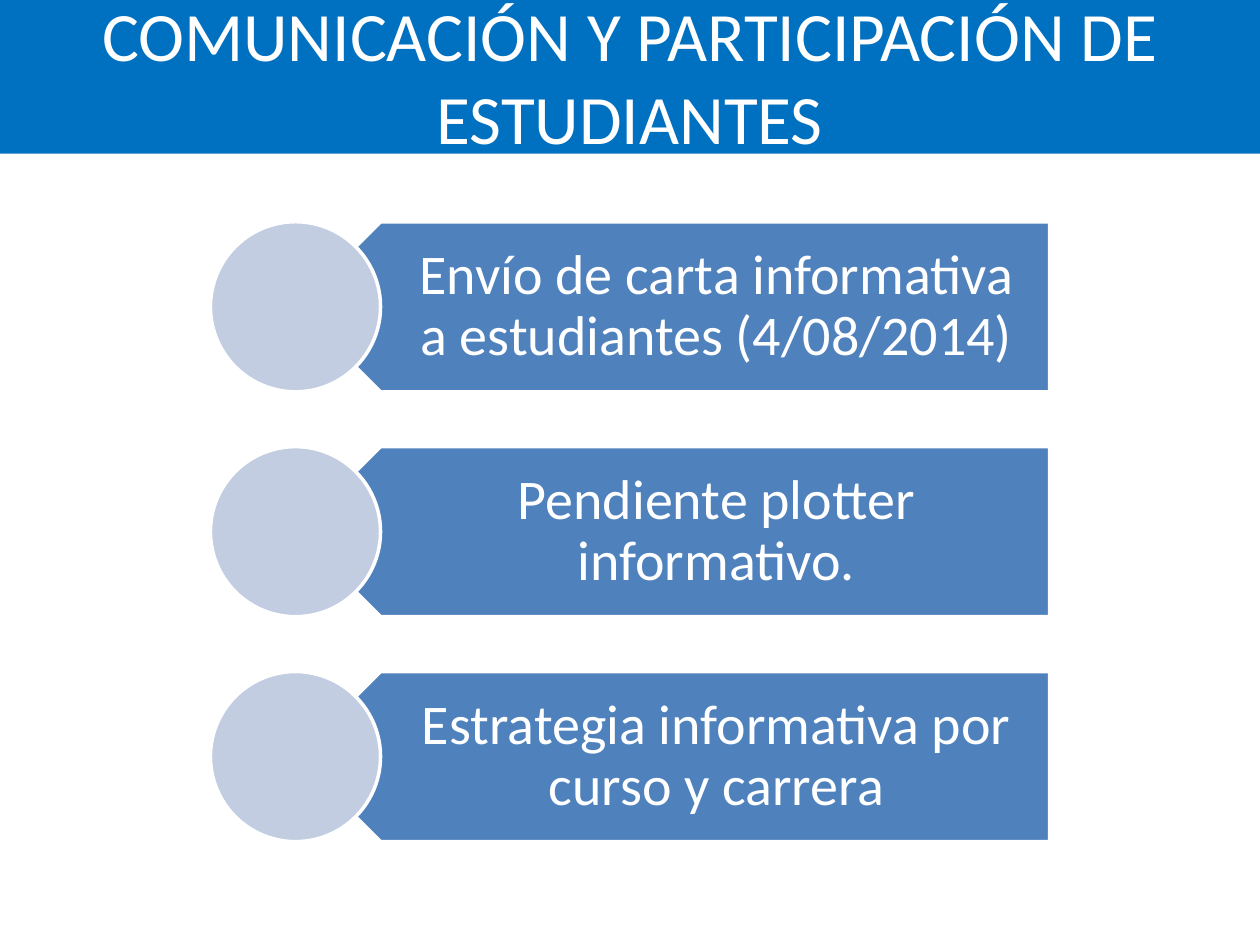
from pptx import Presentation
from pptx.dml.color import RGBColor
from pptx.enum import shapes, text
from pptx.util import Inches, Pt

THEME = {
    "font": "Calibri",
    "banner": "0070C0",
    "arrow": "4F81BD",
    "circle": "C2CDE1",
    "white": "FFFFFF",
    "title_size": 39.6,
    "item_size": 32,
    "line_width": 2,
}

prs = Presentation()
prs.slide_width, prs.slide_height = Inches(10), Inches(7.5)
W, H = prs.slide_width, prs.slide_height
s = prs.slides.add_slide(prs.slide_layouts[6])


def add_block(kind, x, y, w, h, fill, line=None):
    sp = s.shapes.add_shape(kind, int(x), int(y), int(w), int(h))
    sp.shadow.inherit = False
    sp.fill.solid()
    sp.fill.fore_color.rgb = RGBColor.from_string(THEME[fill])
    if line:
        sp.line.color.rgb = RGBColor.from_string(THEME[line])
        sp.line.width = Pt(THEME["line_width"])
    else:
        sp.line.fill.background()
    return sp


def write(sp, words, size):
    tf = sp.text_frame
    tf.word_wrap = True
    tf.vertical_anchor = text.MSO_ANCHOR.MIDDLE
    p = tf.paragraphs[0]
    p.alignment = text.PP_ALIGN.CENTER
    r = p.add_run()
    r.text = words
    r.font.name = THEME["font"]
    r.font.size = Pt(THEME[size])
    r.font.color.rgb = RGBColor.from_string(THEME["white"])
    return tf


banner = add_block(shapes.MSO_SHAPE.RECTANGLE, 0, -0.004 * H, W, H / 6, "banner")
write(banner, "COMUNICACIÓN Y PARTICIPACIÓN DE ESTUDIANTES", "title_size")

items = [
    "Envío de carta informativa a estudiantes (4/08/2014)",
    "Pendiente plotter informativo.",
    "Estrategia informativa por curso y carrera",
]
top, pitch, size = Inches(1.76), Inches(1.785), Inches(1.35)
left, right = Inches(1.67), Inches(8.33)
middle = left + size / 2
text_left = middle + size / 4

for row, item in enumerate(items):
    y = top + row * pitch
    arrow = add_block(shapes.MSO_SHAPE.PENTAGON, middle, y, right - middle, size, "arrow", "white")
    arrow.rotation = 180
    label = s.shapes.add_textbox(int(text_left), int(y), int(right - text_left), size)
    tf = write(label, item, "item_size")
    tf.margin_left, tf.margin_right = Inches(0.61), Inches(0.25)
    tf.margin_top = tf.margin_bottom = Inches(0.13)
    tf.paragraphs[0].line_spacing = 0.9
    add_block(shapes.MSO_SHAPE.OVAL, left, y, size, size, "circle", "white")

prs.save("out.pptx")
